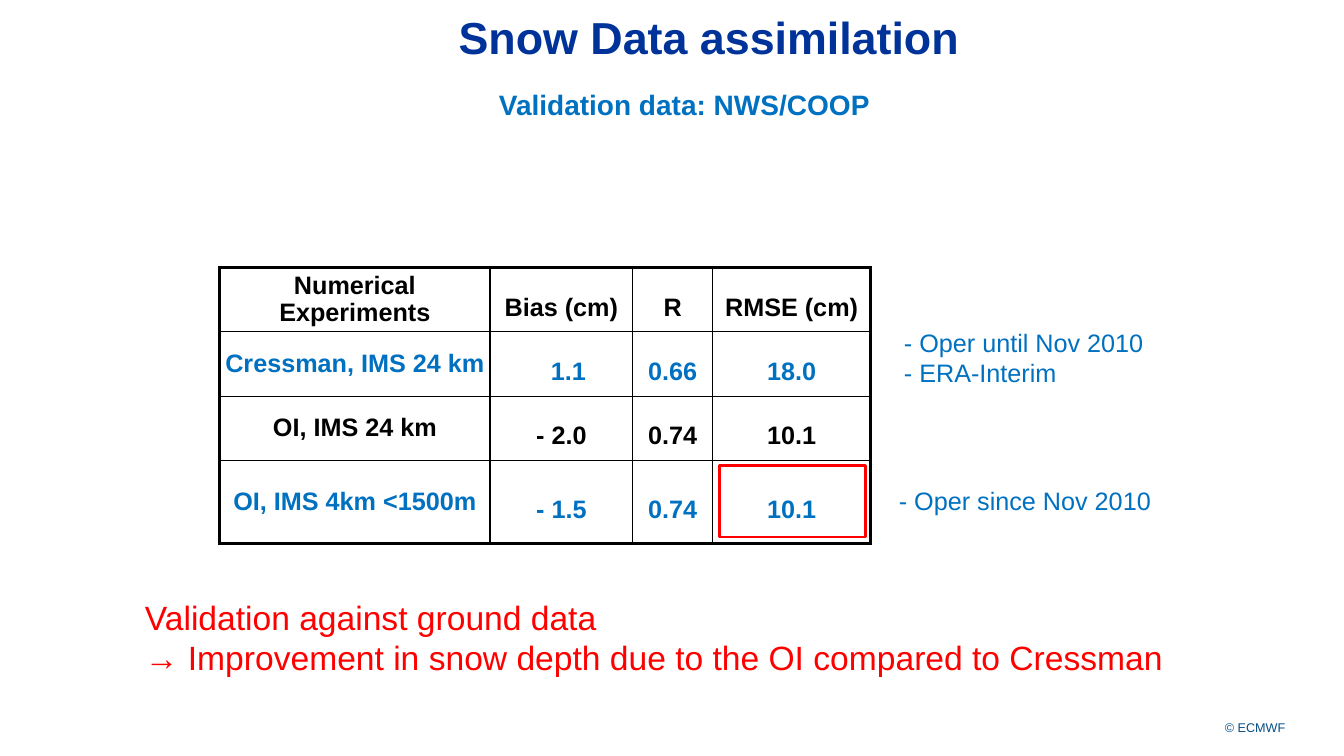
from dataclasses import dataclass

from lxml.etree import SubElement
from pptx import Presentation
from pptx.dml.color import RGBColor
from pptx.enum.shapes import MSO_SHAPE as Shape
from pptx.enum.text import MSO_ANCHOR as Anchor, PP_ALIGN as Align
from pptx.oxml.ns import qn
from pptx.util import Pt


@dataclass(frozen=True)
class Theme:
    font: str = "Arial"
    navy: str = "003399"
    blue: str = "0070C0"
    teal: str = "064E83"
    red: str = "FF0000"
    black: str = "000000"
    title: int = 32
    conclusion: int = 24
    subtitle: int = 20
    body: int = 18
    footer: int = 9


theme = Theme()
deck = Presentation()
deck.slide_width, deck.slide_height = Pt(960), Pt(540)
page = deck.slides.add_slide(deck.slide_layouts[6])


def write(frame, text, size, color, bold=False, align=Align.LEFT,
          anchor=Anchor.TOP, wrap=True, insets=(7.2, 3.6, 7.2, 3.6),
          spacing=None, after=None):
    """Fill a text frame, one paragraph for each line of text."""
    frame.word_wrap = wrap
    frame.vertical_anchor = anchor
    (frame.margin_left, frame.margin_top,
     frame.margin_right, frame.margin_bottom) = map(Pt, insets)
    for index, line in enumerate(text.split("\n")):
        para = frame.add_paragraph() if index else frame.paragraphs[0]
        para.alignment = align
        para.line_spacing = spacing
        if after is not None:
            para.space_after = Pt(after)
        span = para.add_run()
        span.text = line
        span.font.name, span.font.size, span.font.bold = theme.font, Pt(size), bold
        span.font.color.rgb = RGBColor.from_string(color)


def add_border(cell, side, width):
    """Draw one solid border of a table cell."""
    line = SubElement(cell._tc.get_or_add_tcPr(), qn(f"a:ln{side}"),
                      w=str(Pt(width)))
    fill = SubElement(line, qn("a:solidFill"))
    SubElement(fill, qn("a:srgbClr"), val=theme.black)


# Title, subtitle, notes beside the table, conclusion and footer
texts = [
    ((187, -14, 639, 112), "Snow Data assimilation", theme.title, theme.navy,
     dict(bold=True, align=Align.CENTER, anchor=Anchor.MIDDLE, spacing=1.04,
          insets=(7.2, 3.6, 7.2, 37))),
    ((45, 58, 899, 108), "Validation data: NWS/COOP", theme.subtitle, theme.blue,
     dict(bold=True, align=Align.CENTER, spacing=1.04,
          insets=(7.2, 3.6, 18.4, 3.6))),
    ((638.6, 230.4, 187, 51), "- Oper until Nov 2010\n- ERA-Interim",
     theme.body, theme.blue, dict(wrap=False)),
    ((635, 343.4, 196.6, 29), "- Oper since Nov 2010",
     theme.body, theme.blue, dict(wrap=False)),
    ((96.5, 422.6, 741.6, 65.5),
     "Validation against ground data\n"
     "→ Improvement in snow depth due to the OI compared to Cressman",
     theme.conclusion, theme.red, dict(wrap=False)),
    ((764, 496, 154, 29), "© ECMWF", theme.footer, theme.teal,
     dict(align=Align.RIGHT, anchor=Anchor.BOTTOM, insets=(0, 0, 0, 0))),
]
for place, text, size, color, style in texts:
    box = page.shapes.add_textbox(*map(Pt, place))
    write(box.text_frame, text, size, color, **style)

# Table of experiments
experiments = [
    (theme.black, "Numerical Experiments", "Bias (cm)", "R", "RMSE (cm)"),
    (theme.blue, "Cressman, IMS 24 km", "1.1", "0.66", "18.0"),
    (theme.black, "OI, IMS 24 km", "- 2.0", "0.74", "10.1"),
    (theme.blue, "OI, IMS 4km <1500m", "- 1.5", "0.74", "10.1"),
]
widths, heights = (193, 102, 57, 113), (46, 46, 46, 59.5)
thin, thick = 1, 2.25
last_row, last_column = len(heights) - 1, len(widths) - 1
table = page.shapes.add_table(
    len(heights), len(widths), Pt(157), Pt(191),
    Pt(sum(widths)), Pt(sum(heights))).table
table.first_row = table.horz_banding = False
for column, width in zip(table.columns, widths):
    column.width = Pt(width)
for row, height in zip(table.rows, heights):
    row.height = Pt(height)

for r, (color, *values) in enumerate(experiments):
    for c, value in enumerate(values):
        cell = table.cell(r, c)
        indent = 10 if value == "1.1" else 0
        write(cell.text_frame, value, theme.body, color, bold=True,
              align=Align.CENTER, spacing=1.56 if c else 0.95, after=10)
        cell.vertical_anchor = Anchor.MIDDLE
        cell.margin_left = Pt(indent)
        cell.margin_top = cell.margin_right = cell.margin_bottom = 0
        outer = {"L": c == 0, "R": c == last_column,
                 "T": r == 0, "B": r == last_row}
        for side, is_outer in outer.items():
            add_border(cell, side, thick if is_outer else thin)
        cell.fill.background()

# Frame around the best RMSE
highlight = page.shapes.add_shape(
    Shape.RECTANGLE, Pt(514), Pt(332.6), Pt(104), Pt(51))
highlight.shadow.inherit = False
highlight.fill.background()
highlight.line.color.rgb = RGBColor.from_string(theme.red)
highlight.line.width = Pt(2)

deck.save("out.pptx")
